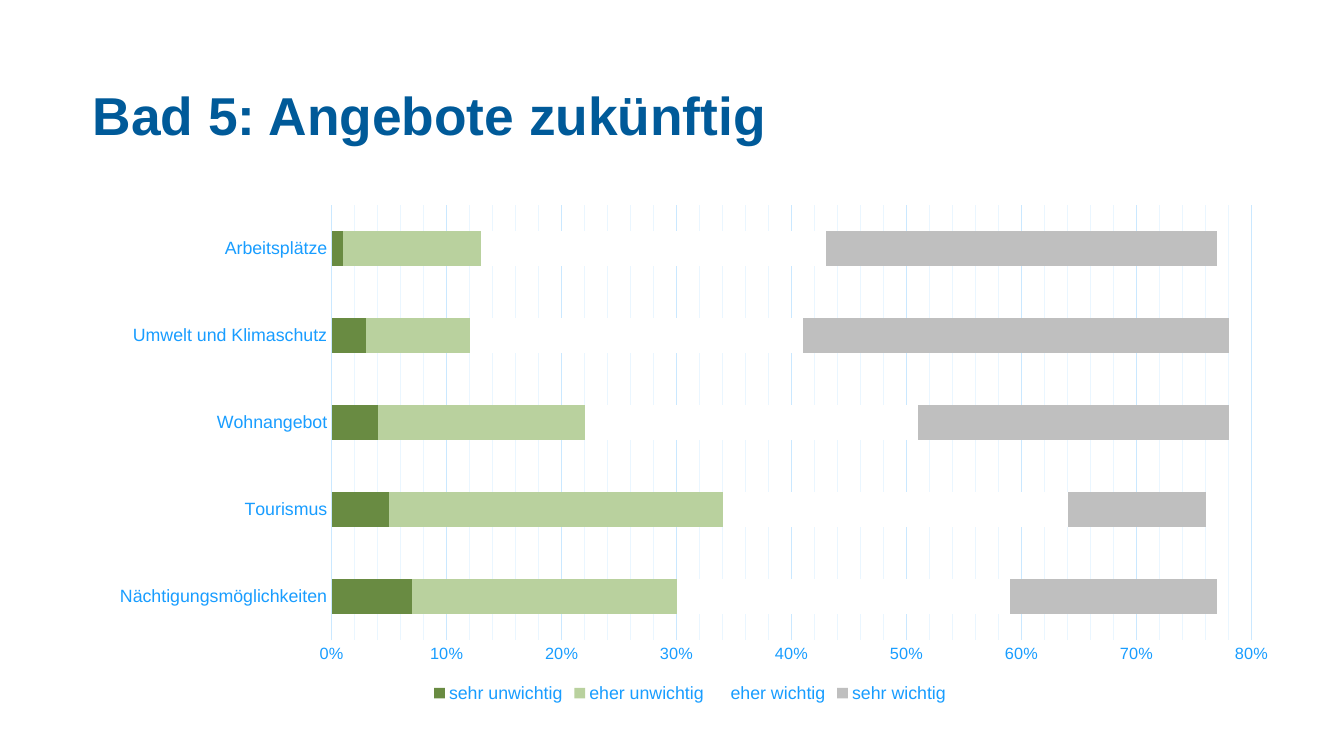
import pptx
import pptx.chart.data
import pptx.dml.color
import pptx.enum.chart
import pptx.enum.text
import pptx.oxml
import pptx.oxml.ns
import pptx.util

RGBColor = pptx.dml.color.RGBColor
Inches = pptx.util.Inches
Pt = pptx.util.Pt

NAVY = RGBColor(0x00, 0x5A, 0x99)
SKY = RGBColor(0x18, 0x9D, 0xFF)
PALE_SKY = RGBColor(0xCA, 0xE8, 0xFF)
FAINT_SKY = RGBColor(0xEA, 0xF6, 0xFF)
DARK_GREEN = RGBColor(0x69, 0x8B, 0x42)
LIGHT_GREEN = RGBColor(0xB9, 0xD1, 0x9E)
WHITE = RGBColor(0xFF, 0xFF, 0xFF)
GREY = RGBColor(0xBF, 0xBF, 0xBF)

TOPICS = ["Nächtigungsmöglichkeiten", "Tourismus", "Wohnangebot",
          "Umwelt und Klimaschutz", "Arbeitsplätze"]
RATINGS = [
    ("sehr unwichtig", DARK_GREEN, (0.07, 0.05, 0.04, 0.03, 0.01)),
    ("eher unwichtig", LIGHT_GREEN, (0.23, 0.29, 0.18, 0.09, 0.12)),
    ("eher wichtig", WHITE, (0.29, 0.3, 0.29, 0.29, 0.3)),
    ("sehr wichtig", GREY, (0.18, 0.12, 0.27, 0.37, 0.34)),
]
PLOT_LAYOUT = {"x": 0.2, "y": 0.02, "w": 0.77, "h": 0.85}


class SurveySlide:
    """Hold the survey style and the slide it is applied to."""

    font_name = "Arial"

    def __init__(self, presentation):
        self.slide = presentation.slides.add_slide(presentation.slide_layouts[5])

    def style_font(self, font, size, color, bold=False):
        font.name = self.font_name
        font.size = Pt(size)
        font.bold = bold
        font.color.rgb = color

    def style_line(self, line, color):
        line.color.rgb = color
        line.width = Pt(0.75)

    def title(self, text, left, top, width, height):
        heading = self.slide.shapes.title
        heading.left, heading.top = Inches(left), Inches(top)
        heading.width, heading.height = Inches(width), Inches(height)
        frame = heading.text_frame
        frame.margin_left = frame.margin_right = 0
        frame.margin_top = frame.margin_bottom = 0
        frame.vertical_anchor = pptx.enum.text.MSO_ANCHOR.TOP
        frame.auto_size = pptx.enum.text.MSO_AUTO_SIZE.NONE
        frame.text = text
        line = frame.paragraphs[0]
        line.alignment = pptx.enum.text.PP_ALIGN.LEFT
        line.line_spacing = Pt(38)
        self.style_font(line.runs[0].font, 36, NAVY, bold=True)

    def stacked_bars(self, topics, ratings, left, top, width, height):
        answers = pptx.chart.data.CategoryChartData(number_format="0%")
        answers.categories = topics
        for name, _, shares in ratings:
            answers.add_series(name, shares)
        chart = self.slide.shapes.add_chart(
            pptx.enum.chart.XL_CHART_TYPE.BAR_STACKED, Inches(left), Inches(top),
            Inches(width), Inches(height), answers).chart
        self.style_font(chart.font, 10, NAVY)
        chart.has_title = False
        bars = chart.plots[0]
        bars.gap_width, bars.overlap = 150, 100
        bars.vary_by_categories = False
        for series, (_, color, _) in zip(bars.series, ratings):
            series.format.fill.solid()
            series.format.fill.fore_color.rgb = color
        self.axes(chart)
        self.legend(chart)
        self.plot_layout(chart)

    def axes(self, chart):
        topic_axis, share_axis = chart.category_axis, chart.value_axis
        for axis, size in ((topic_axis, 12), (share_axis, 11)):
            axis.major_tick_mark = pptx.enum.chart.XL_TICK_MARK.NONE
            axis.minor_tick_mark = pptx.enum.chart.XL_TICK_MARK.NONE
            self.style_font(axis.tick_labels.font, size, SKY)
        self.style_line(topic_axis.format.line, PALE_SKY)
        share_axis.format.line.fill.background()
        share_axis.minimum_scale, share_axis.maximum_scale = 0, 0.8
        share_axis.major_unit, share_axis.minor_unit = 0.1, 0.02
        share_axis.tick_labels.number_format = "0%"
        share_axis.tick_labels.number_format_is_linked = False
        share_axis.has_major_gridlines = share_axis.has_minor_gridlines = True
        self.style_line(share_axis.major_gridlines.format.line, PALE_SKY)
        self.minor_gridlines(chart, FAINT_SKY)

    def minor_gridlines(self, chart, color):
        gridlines = chart.element.find(".//" + pptx.oxml.ns.qn("c:minorGridlines"))
        gridlines.append(pptx.oxml.parse_xml(
            f'<c:spPr {pptx.oxml.ns.nsdecls("c", "a")}><a:ln w="{Pt(0.75)}"><a:solidFill>'
            f'<a:srgbClr val="{color}"/></a:solidFill></a:ln></c:spPr>'))

    def legend(self, chart):
        chart.has_legend = True
        chart.legend.position = pptx.enum.chart.XL_LEGEND_POSITION.BOTTOM
        chart.legend.include_in_layout = False
        self.style_font(chart.legend.font, 12, SKY)

    def plot_layout(self, chart):
        modes = '<c:xMode val="edge"/><c:yMode val="edge"/>'
        sizes = "".join(f'<c:{side} val="{share}"/>' for side, share in PLOT_LAYOUT.items())
        layout = pptx.oxml.parse_xml(
            f'<c:layout {pptx.oxml.ns.nsdecls("c")}><c:manualLayout>'
            f'<c:layoutTarget val="inner"/>{modes}{sizes}</c:manualLayout></c:layout>')
        plot_area = chart.element.find(".//" + pptx.oxml.ns.qn("c:plotArea"))
        for automatic in plot_area.findall(pptx.oxml.ns.qn("c:layout")):
            plot_area.remove(automatic)
        plot_area.insert(0, layout)


def main():
    presentation = pptx.Presentation()
    presentation.slide_width, presentation.slide_height = Inches(12.6), Inches(7.09)
    survey = SurveySlide(presentation)
    survey.title("Bad 5: Angebote zukünftig", 0.87, 0.84, 7.84, 0.53)
    survey.stacked_bars(TOPICS, RATINGS, 0.87, 1.83, 11.2, 4.8)
    presentation.save("out.pptx")


if __name__ == "__main__":
    main()
